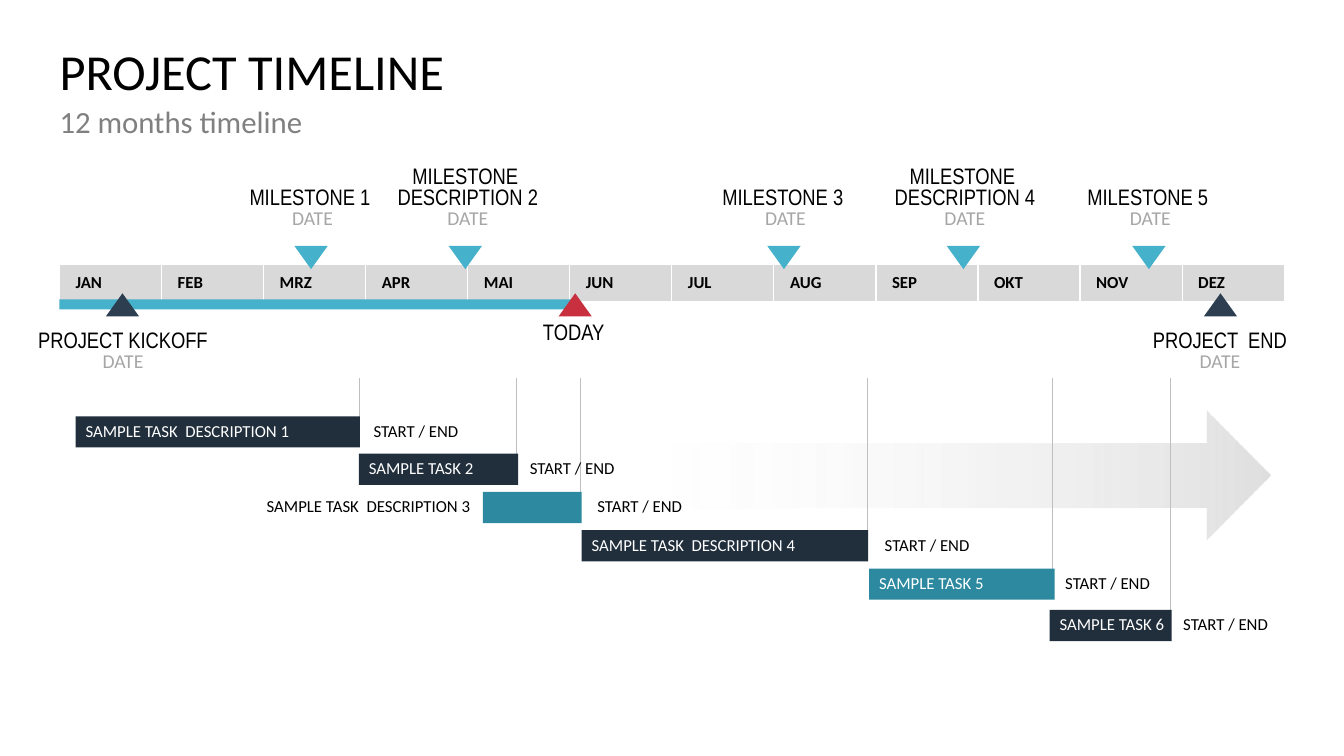
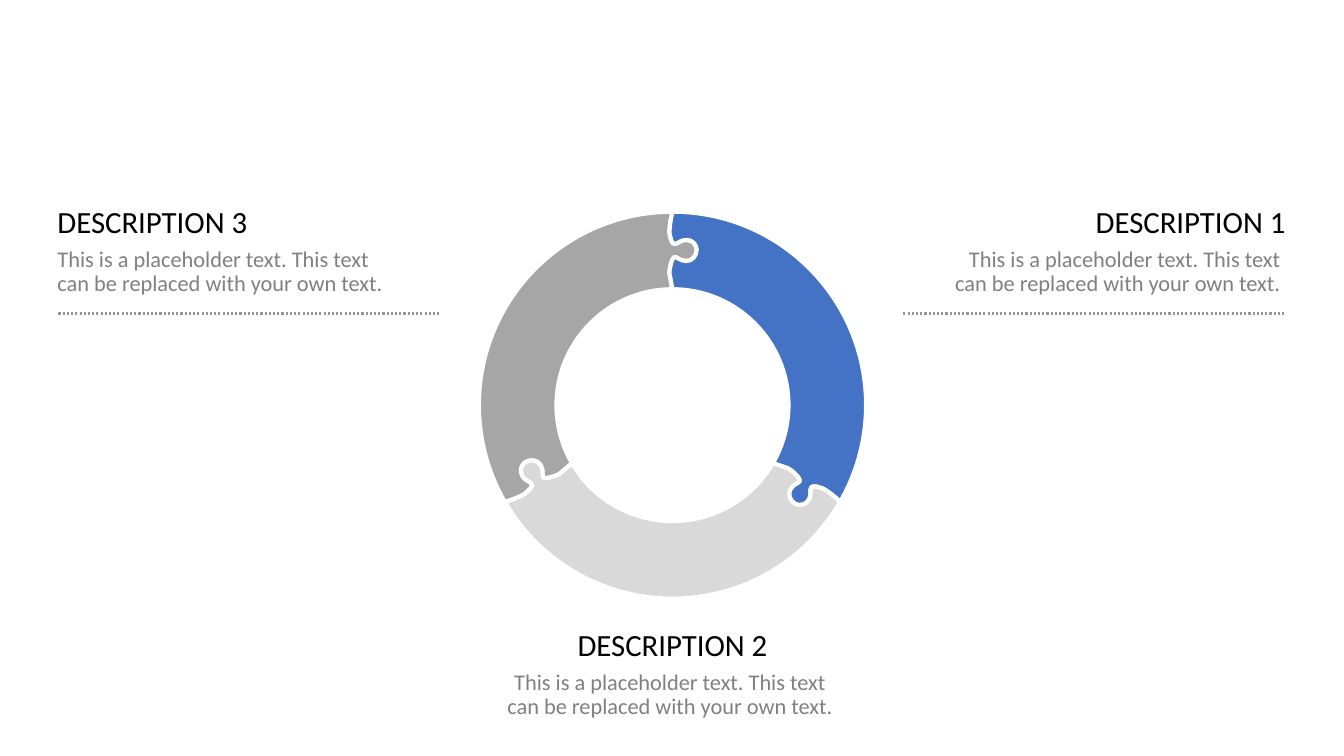
"""Build a project timeline slide and a three-part puzzle ring slide."""
import copy
import math

import pptx
import pptx.dml.color
import pptx.enum.dml
import pptx.enum.shapes
import pptx.enum.text
import pptx.oxml
import pptx.oxml.ns
import pptx.util

Inches = pptx.util.Inches
SHAPES = pptx.enum.shapes.MSO_SHAPE
ANCHOR = pptx.enum.text.MSO_ANCHOR
ALIGN = pptx.enum.text.PP_ALIGN
qn = pptx.oxml.ns.qn
NAMESPACE = pptx.oxml.ns.nsdecls("a")

COLORS = {
    "black": "000000", "white": "FFFFFF", "gray": "808080", "date": "A6A6A6",
    "band": "D9D9D9", "guide": "BFBFBF", "dots": "969696", "arrow": "979797",
    "sky": "45B1CB", "teal": "2D899F", "navy": "212E3C", "slate": "2C3E50",
    "red": "C8303F", "blue": "4472C4",
}
LEFT, WIDTH = 0.59, 12.15
MONTHS = ["JAN", "FEB", "MRZ", "APR", "MAI", "JUN", "JUL", "AUG", "SEP", "OKT", "NOV", "DEZ"]
MARKER_WIDTH, MARKER_HEIGHT, LABEL_WIDTH = 0.33, 0.23, 1.7
MILESTONES = [
    (2.92, 2.25, "MILESTONE 1 \n"),
    (4.45, 3.79, "MILESTONE \nDESCRIPTION 2\n"),
    (7.61, 6.94, "MILESTONE 3 \n"),
    (9.39, 8.72, "MILESTONE \nDESCRIPTION 4\n"),
    (11.23, 10.56, "MILESTONE 5 \n"),
]
EVENTS = [
    (1.05, 0.37, 0.4, "PROJECT KICKOFF\n", "DATE", "slate"),
    (11.94, 11.25, 0.4, "PROJECT  END\n", "DATE", "slate"),
    (5.54, 4.84, 0.32, "TODAY\n", "", "red"),
]
BAR_HEIGHT, GUIDE_TOP = 0.31, 3.75
TASKS = [
    ("SAMPLE TASK  DESCRIPTION 1", 0.75, 4.13, 2.82, 3.57, 3.69, 1.33, "navy"),
    ("SAMPLE TASK 2", 3.56, 4.5, 1.58, 5.12, 5.24, 1.01, "navy"),
    ("SAMPLE TASK  DESCRIPTION 3", 4.79, 4.88, 0.98, 5.76, 5.91, 1.02, "teal"),
    ("SAMPLE TASK  DESCRIPTION 4", 5.77, 5.26, 2.84, 8.6, 8.76, 1.05, "navy"),
    ("SAMPLE TASK 5", 8.62, 5.64, 1.84, 10.44, 10.55, 1.0, "teal"),
    ("SAMPLE TASK 6", 10.41, 6.05, 1.21, 11.61, 11.72, 1.01, "navy"),
]
OUTSIDE_LABEL_LEFT, OUTSIDE_LABEL_WIDTH = 2.5, 2.28
CENTER_X, CENTER_Y, OUTER, INNER = 6.67, 4.02, 1.92, 1.15
SEAM = [
    (0, INNER),
    (0, 1.15), (-0.02, 1.25), (-0.03, 1.31),
    (-0.03, 1.37), (0, 1.47), (0.02, 1.47),
    (0.05, 1.47), (0.07, 1.43), (0.14, 1.43),
    (0.2, 1.43), (0.24, 1.49), (0.24, 1.54),
    (0.24, 1.59), (0.2, 1.64), (0.14, 1.64),
    (0.07, 1.64), (0.06, 1.6), (0.02, 1.6),
    (-0.01, 1.6), (-0.02, 1.66), (-0.03, 1.71),
    (-0.03, 1.77), (-0.02, 1.84), (0, OUTER),
]
RING_PIECES = [((240, 270, 360), "date"), ((0, 90, 120), "blue"), ((120, 180, 240), "band")]
BODY = "This is a placeholder text. This text \ncan be replaced with your own text."
DESCRIPTIONS = [
    ("DESCRIPTION 3", BODY, 0.57, 2.01, ALIGN.LEFT),
    ("DESCRIPTION 1", BODY + " ", 9.19, 2.01, ALIGN.RIGHT),
    ("DESCRIPTION 2", BODY + " ", 4.89, 6.21, ALIGN.CENTER),
]
DOTTED_LINES = [(0.58, 4.36), (8.96, 12.74)]
DOTTED_TOP = 3.11


def rgb(name):
    return pptx.dml.color.RGBColor.from_string(COLORS[name])


def write(para, text, *, size=12, font="Calibri", color="black", bold=False,
          align=ALIGN.LEFT, line=0.9, after=0):
    para.alignment, para.line_spacing = align, line
    para.space_after = pptx.util.Pt(after)
    for index, part in enumerate(text.split("\n")):
        if index:
            para.add_line_break()
            line_break = para._p.findall(qn("a:br"))[-1]
            line_break.insert(0, copy.deepcopy(span._r.rPr))
        if part:
            span = para.add_run()
            span.text = part
            span.font.size, span.font.name = pptx.util.Pt(size), font
            span.font.bold, span.font.color.rgb = bold, rgb(color)


def prepare(shape, anchor=ANCHOR.TOP, inset=0, wrap=True):
    frame = shape.text_frame
    frame.auto_size = pptx.enum.text.MSO_AUTO_SIZE.NONE
    frame.word_wrap, frame.vertical_anchor = wrap, anchor
    frame.margin_left = frame.margin_right = Inches(inset)
    frame.margin_top = frame.margin_bottom = 0
    return frame.paragraphs[0]


def add_box(page, left, top, width, height, **frame):
    box = page.shapes.add_textbox(*map(Inches, (left, top, width, height)))
    return prepare(box, **frame)


def add_block(page, kind, left, top, width, height, color=None):
    shape = page.shapes.add_shape(kind, *map(Inches, (left, top, width, height)))
    shape.shadow.inherit = False
    if color:
        shape.fill.solid()
        shape.fill.fore_color.rgb = rgb(color)
    else:
        shape.fill.background()
    shape.line.fill.background()
    return shape


def add_line(page, start, end, color, width):
    line = page.shapes.add_connector(
        pptx.enum.shapes.MSO_CONNECTOR.STRAIGHT, *map(Inches, start + end))
    line.line.color.rgb, line.line.width = rgb(color), pptx.util.Pt(width)
    line._element.spPr.append(pptx.oxml.parse_xml(f"<a:effectLst {NAMESPACE}/>"))
    return line


def add_months(page):
    table = page.shapes.add_table(
        1, len(MONTHS), *map(Inches, (LEFT, 2.63, WIDTH, 0.36))).table
    table.first_row = table.horz_banding = False
    white = f"<a:solidFill><a:srgbClr val='{COLORS['white']}'/></a:solidFill>"
    borders = {"lnL": white, "lnR": white, "lnT": "<a:noFill/>", "lnB": "<a:noFill/>"}
    for column, month in enumerate(MONTHS):
        table.columns[column].width = Inches(WIDTH / len(MONTHS))
        cell = table.cell(0, column)
        cell.margin_left, cell.margin_right = Inches(0.16), Inches(0.01)
        cell.margin_top = cell.margin_bottom = Inches(0.06)
        cell.vertical_anchor = ANCHOR.MIDDLE
        write(cell.text_frame.paragraphs[0], month, bold=True, line=1.0)
        cell.fill.solid()
        cell.fill.fore_color.rgb = rgb("band")
        for position, (side, paint) in enumerate(borders.items()):
            cell._tc.tcPr.insert(position, pptx.oxml.parse_xml(
                f"<a:{side} {NAMESPACE} w='12700'>{paint}</a:{side}>"))


def add_marker(page, left, top, color, rotation=0):
    marker = add_block(page, SHAPES.ISOSCELES_TRIANGLE, left, top,
                       MARKER_WIDTH, MARKER_HEIGHT, color)
    marker.rotation = rotation


def add_label(page, left, top, height, name, date, anchor):
    para = add_box(page, left, top, LABEL_WIDTH, height, anchor=anchor)
    write(para, name, size=16, font="Arial Narrow", align=ALIGN.CENTER, line=0.8)
    write(para, date, size=14, color="date", align=ALIGN.CENTER, line=0.8)


def add_arrow(page):
    arrow = add_block(page, SHAPES.RIGHT_ARROW, 0.75, 4.07, 11.85, 1.28, "arrow")
    arrow.fill.gradient()
    arrow.fill.gradient_angle = 0
    stops = zip(arrow.fill.gradient_stops, [(0.43, "white", 0), (1, "arrow", 30)])
    for stop, (position, color, opacity) in stops:
        stop.position, stop.color.rgb = position, rgb(color)
        stop._gs.find(qn("a:srgbClr")).append(pptx.oxml.parse_xml(
            f"<a:alpha {NAMESPACE} val='{opacity * 1000}'/>"))


def add_tasks(page):
    for name, left, top, width, guide, *rest in TASKS:
        add_line(page, (guide, GUIDE_TOP), (guide, top + BAR_HEIGHT / 2), "guide", 0.75)
    for name, left, top, width, guide, date_left, date_width, color in TASKS:
        holder = add_block(page, SHAPES.RECTANGLE, left, top, width, BAR_HEIGHT, color)
        style = {"color": "white"}
        if width < 1:
            holder = add_block(page, SHAPES.ROUNDED_RECTANGLE, OUTSIDE_LABEL_LEFT, top,
                               OUTSIDE_LABEL_WIDTH, BAR_HEIGHT)
            style = {"align": ALIGN.RIGHT}
        para = prepare(holder, anchor=ANCHOR.MIDDLE, inset=0.1, wrap=False)
        write(para, name, after=10, **style)
        dates = add_block(page, SHAPES.ROUNDED_RECTANGLE, date_left, top, date_width, BAR_HEIGHT)
        write(prepare(dates, anchor=ANCHOR.MIDDLE), "START / END", after=10)


def build_timeline(deck):
    page = deck.slides.add_slide(deck.slide_layouts[5])
    add_months(page)
    title = page.shapes.title
    title.left, title.top, title.width, title.height = map(Inches, (LEFT, 0.47, WIDTH, 1.18))
    write(prepare(title), "PROJECT TIMELINE", size=36)
    write(add_box(page, LEFT, 1.06, WIDTH, 0.59), "12 months timeline",
          size=22, color="gray", after=10)
    for marker_left, label_left, name in MILESTONES:
        height = 0.18 + 0.22 * name.count("\n")
        add_label(page, label_left, 2.27 - height, height, name, "DATE", ANCHOR.BOTTOM)
        add_marker(page, marker_left, 2.44, "sky", rotation=180)
    add_block(page, SHAPES.RECTANGLE, LEFT, 2.97, 5.1, 0.1, "sky")
    add_arrow(page)
    for marker_left, label_left, height, name, date, color in EVENTS:
        add_marker(page, marker_left, 2.91, color)
        add_label(page, label_left, 3.29, height, name, date, ANCHOR.MIDDLE)
    add_tasks(page)


def place(angle, side, radius):
    turn = math.radians(angle)
    return (Inches(CENTER_X + radius * math.sin(turn) + side * math.cos(turn)),
            Inches(CENTER_Y - radius * math.cos(turn) + side * math.sin(turn)))


def seam(angle):
    return [place(angle, side, radius) for side, radius in SEAM]


def arc(angles, radius):
    points = []
    for start, end in zip(angles, angles[1:]):
        reach = 4 / 3 * math.tan(math.radians(end - start) / 4) * radius
        points += [place(start, reach, radius), place(end, -reach, radius), place(end, 0, radius)]
    return points


def add_ring_piece(page, angles, color):
    points = seam(angles[0]) + arc(angles, OUTER)
    points += seam(angles[-1])[-2::-1] + arc(angles[::-1], INNER)
    builder = page.shapes.build_freeform(*points[0])
    builder.add_line_segments(points[1:], close=True)
    piece = builder.convert_to_shape()
    segments = list(piece._element.iter(qn("a:lnTo")))
    for first in range(0, len(segments), 3):
        curve = pptx.oxml.parse_xml(f"<a:cubicBezTo {NAMESPACE}/>")
        segments[first].addprevious(curve)
        for segment in segments[first:first + 3]:
            curve.append(segment[0])
            segment.getparent().remove(segment)
    piece.shadow.inherit = False
    piece.fill.solid()
    piece.fill.fore_color.rgb = rgb(color)
    piece.line.color.rgb, piece.line.width = rgb("white"), pptx.util.Pt(3)


def build_ring(deck):
    page = deck.slides.add_slide(deck.slide_layouts[6])
    for angles, color in RING_PIECES:
        add_ring_piece(page, angles, color)
    for heading, body, left, top, align in DESCRIPTIONS:
        para = add_box(page, left, top, 3.56, 0.94)
        write(para, heading, size=22, align=align, line=1.0, after=6)
        para = page.shapes[-1].text_frame.add_paragraph()
        write(para, body, size=16, color="gray", align=align, after=6)
    for start, end in DOTTED_LINES:
        line = add_line(page, (start, DOTTED_TOP), (end, DOTTED_TOP), "dots", 1.5)
        line.line.dash_style = pptx.enum.dml.MSO_LINE.ROUND_DOT


def main():
    deck = pptx.Presentation()
    deck.slide_width, deck.slide_height = Inches(13.33), Inches(7.5)
    build_timeline(deck)
    build_ring(deck)
    deck.save("out.pptx")


if __name__ == "__main__":
    main()
